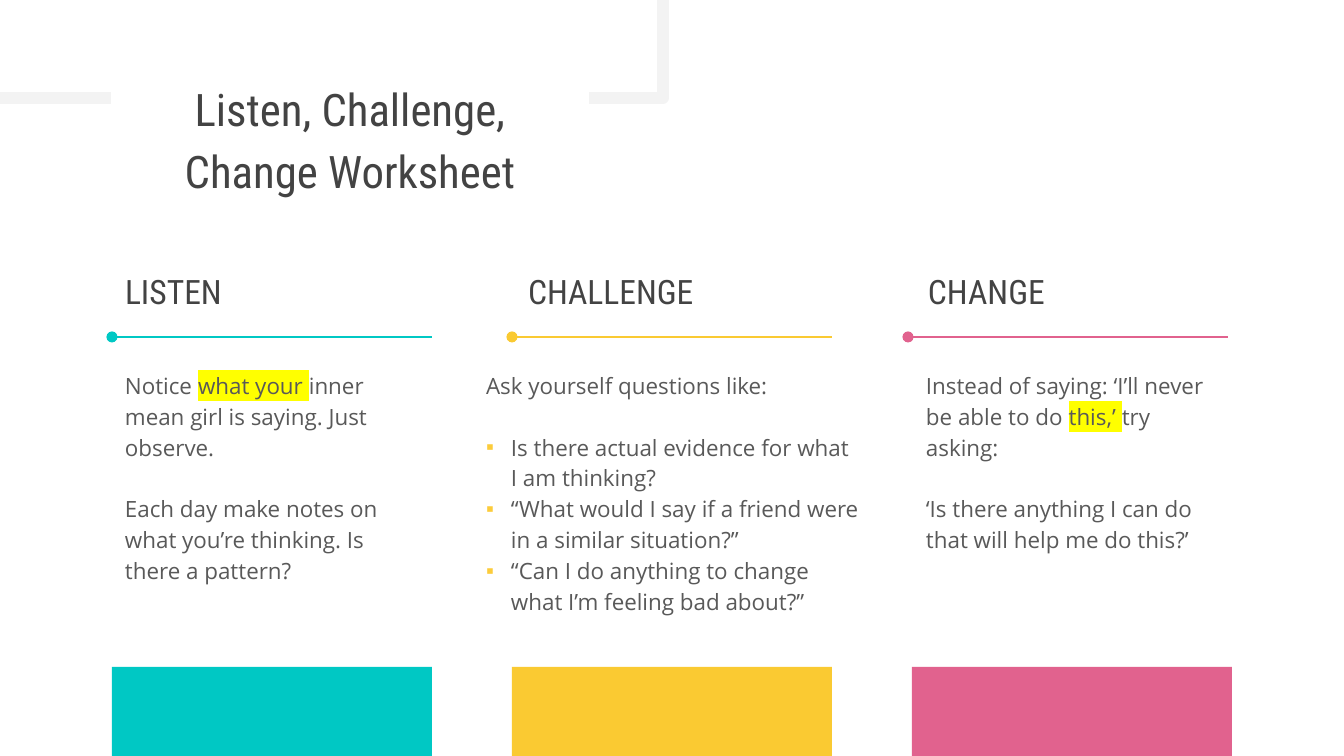
from dataclasses import dataclass

from lxml import etree
from pptx import Presentation
from pptx.dml.color import RGBColor
from pptx.enum.shapes import MSO_CONNECTOR, MSO_SHAPE
from pptx.enum.text import MSO_ANCHOR, MSO_AUTO_SIZE, PP_ALIGN
from pptx.oxml.ns import qn
from pptx.util import Emu, Pt

RECT, STRAIGHT = MSO_SHAPE.RECTANGLE, MSO_CONNECTOR.STRAIGHT
TOP, MIDDLE = MSO_ANCHOR.TOP, MSO_ANCHOR.MIDDLE
LEFT, CENTER = PP_ALIGN.LEFT, PP_ALIGN.CENTER

WHITE = RGBColor(0xFF, 0xFF, 0xFF)
FRAME_GRAY = RGBColor(0xF3, 0xF3, 0xF3)
DARK = RGBColor(0x43, 0x43, 0x43)
TEXT_GRAY = RGBColor(0x59, 0x59, 0x59)
TEAL = RGBColor(0x00, 0xC8, 0xC4)
YELLOW = RGBColor(0xFA, 0xCA, 0x32)
PINK = RGBColor(0xE1, 0x62, 0x8E)
BULLET_YELLOW = RGBColor(0xFC, 0xCC, 0x3B)
MARKER = RGBColor(0xFF, 0xFF, 0x00)

HEAD_FONT, BODY_FONT = "Roboto Condensed", "Open Sans"
EMU_PER_PX = 914400 / 134.4
SLIDE_W, SLIDE_H = 1344, 756
COLUMN_X, COLUMN_STEP, COLUMN_W = 112, 400, 320
BAR_Y, RULE_Y, HEADING_Y, BODY_Y = 667, 337, 263, 355
HEADING_W, HEADING_H, BODY_H = 317, 56, 230
INSET, BULLET_INDENT = 13, 25
BLANK_LINE = 16.5


@dataclass(frozen=True)
class Run:
    text: str
    marked: bool = False


@dataclass(frozen=True)
class Para:
    runs: tuple[Run, ...]
    gap: float = 0
    bullet: bool = False


@dataclass(frozen=True)
class Column:
    heading: str
    color: RGBColor
    heading_x: int
    rule_x: int
    body_x: int
    body_w: int
    paras: tuple[Para, ...]


def plain(text: str, gap: float = 0, bullet: bool = False) -> Para:
    return Para((Run(text),), gap, bullet)


COLUMNS = (
    Column("LISTEN", TEAL, 112, 112, 112, 314, (
        Para((Run("Notice "), Run("what your ", True),
              Run("inner mean girl is saying. Just observe."))),
        plain("Each day make notes on what you’re thinking. Is there a pattern?", BLANK_LINE),
    )),
    Column("CHALLENGE", YELLOW, 515, 512, 473, 400, (
        plain("Ask yourself questions like:"),
        plain("Is there actual evidence for what I am thinking?", BLANK_LINE, True),
        plain("“What would I say if a friend were in a similar situation?”", bullet=True),
        plain("“Can I do anything to change what I’m feeling bad about?”", bullet=True),
    )),
    Column("CHANGE", PINK, 915, 908, 913, 314, (
        Para((Run("Instead of saying: ‘I’ll never be able to do "), Run("this,’ ", True),
              Run("try asking:"))),
        plain("‘Is there anything I can do that will help me do this?’", BLANK_LINE),
    )),
)


def px(n: int) -> Emu:
    return Emu(round(n * EMU_PER_PX))


def add_color(parent, tag: str, color: RGBColor) -> None:
    el = etree.SubElement(parent, qn(tag))
    etree.SubElement(el, qn("a:srgbClr"), val=str(color))


def set_bullet(p, bullet: bool) -> None:
    """Set the indent and the square bullet, or clear the inherited ones."""
    pPr = p._p.get_or_add_pPr()
    indent = px(BULLET_INDENT) if bullet else 0
    pPr.set("marL", str(indent))
    pPr.set("indent", str(-indent))
    if bullet:
        add_color(pPr, "a:buClr", BULLET_YELLOW)
        etree.SubElement(pPr, qn("a:buChar"), char="▪")
    else:
        etree.SubElement(pPr, qn("a:buNone"))


def write_text(sp, x: int, y: int, w: int, h: int, paras: tuple[Para, ...], *, font: str,
               size: int, color: RGBColor, align=LEFT, anchor=TOP, spacing: float = 1.15) -> None:
    """Place a text box or placeholder and fill it with formatted paragraphs."""
    sp.left, sp.top, sp.width, sp.height = px(x), px(y), px(w), px(h)
    tf = sp.text_frame
    tf.word_wrap = True
    tf.auto_size = MSO_AUTO_SIZE.NONE
    tf.vertical_anchor = anchor
    tf.margin_left = tf.margin_right = tf.margin_top = tf.margin_bottom = px(INSET)
    for i, para in enumerate(paras):
        p = tf.add_paragraph() if i else tf.paragraphs[0]
        p.alignment = align
        p.line_spacing = spacing
        p.space_before, p.space_after = Pt(para.gap), Pt(0)
        set_bullet(p, para.bullet)
        for run in para.runs:
            r = p.add_run()
            r.text = run.text
            r.font.size = Pt(size)
            r.font.color.rgb = color
            if run.marked:
                add_color(r._r.get_or_add_rPr(), "a:highlight", MARKER)
            r.font.name = font


def add_rect(s, x: int, y: int, w: int, h: int):
    sp = s.shapes.add_shape(RECT, px(x), px(y), px(w), px(h))
    sp.shadow.inherit = False
    return sp


def add_frame(s) -> None:
    frame = add_rect(s, -12, -34, 675, 132)
    frame.fill.background()
    frame.line.color.rgb = FRAME_GRAY
    frame.line.width = Pt(6)
    s.shapes.title._element.addprevious(frame._element)


def add_bar(s, x: int, color: RGBColor) -> None:
    bar = add_rect(s, x, BAR_Y, COLUMN_W, SLIDE_H - BAR_Y)
    bar.fill.solid()
    bar.fill.fore_color.rgb = color
    bar.line.fill.background()


def add_rule(s, x: int, color: RGBColor) -> None:
    """Draw a coloured line that starts with a dot."""
    rule = s.shapes.add_connector(STRAIGHT, px(x), px(RULE_Y), px(x + COLUMN_W), px(RULE_Y))
    rule.line.color.rgb = color
    rule.line.width = Pt(1.5)
    etree.SubElement(rule.line._get_or_add_ln(), qn("a:headEnd"), type="oval")
    etree.SubElement(rule._element.spPr, qn("a:effectLst"))


def add_column(s, col: Column, bar_x: int) -> None:
    add_bar(s, bar_x, col.color)
    heading = s.shapes.add_textbox(0, 0, 0, 0)
    write_text(heading, col.heading_x, HEADING_Y, HEADING_W, HEADING_H, (plain(col.heading),),
               font=HEAD_FONT, size=18, color=DARK, anchor=MIDDLE, spacing=1.0)
    add_rule(s, col.rule_x, col.color)
    has_list = any(para.bullet for para in col.paras)
    body = s.placeholders[1] if has_list else s.shapes.add_textbox(0, 0, 0, 0)
    write_text(body, col.body_x, BODY_Y, col.body_w, BODY_H, col.paras,
               font=BODY_FONT, size=12, color=TEXT_GRAY)


def main() -> None:
    prs = Presentation()
    prs.slide_width, prs.slide_height = px(SLIDE_W), px(SLIDE_H)
    s = prs.slides.add_slide(prs.slide_layouts[1])
    add_frame(s)
    title = s.shapes.title
    title.fill.solid()
    title.fill.fore_color.rgb = WHITE
    write_text(title, 111, 61, 478, 80, (plain("Listen, Challenge, Change Worksheet"),),
               font=HEAD_FONT, size=24, color=DARK, align=CENTER)
    for i, col in enumerate(COLUMNS):
        add_column(s, col, COLUMN_X + i * COLUMN_STEP)
    prs.save("out.pptx")


if __name__ == "__main__":
    main()
